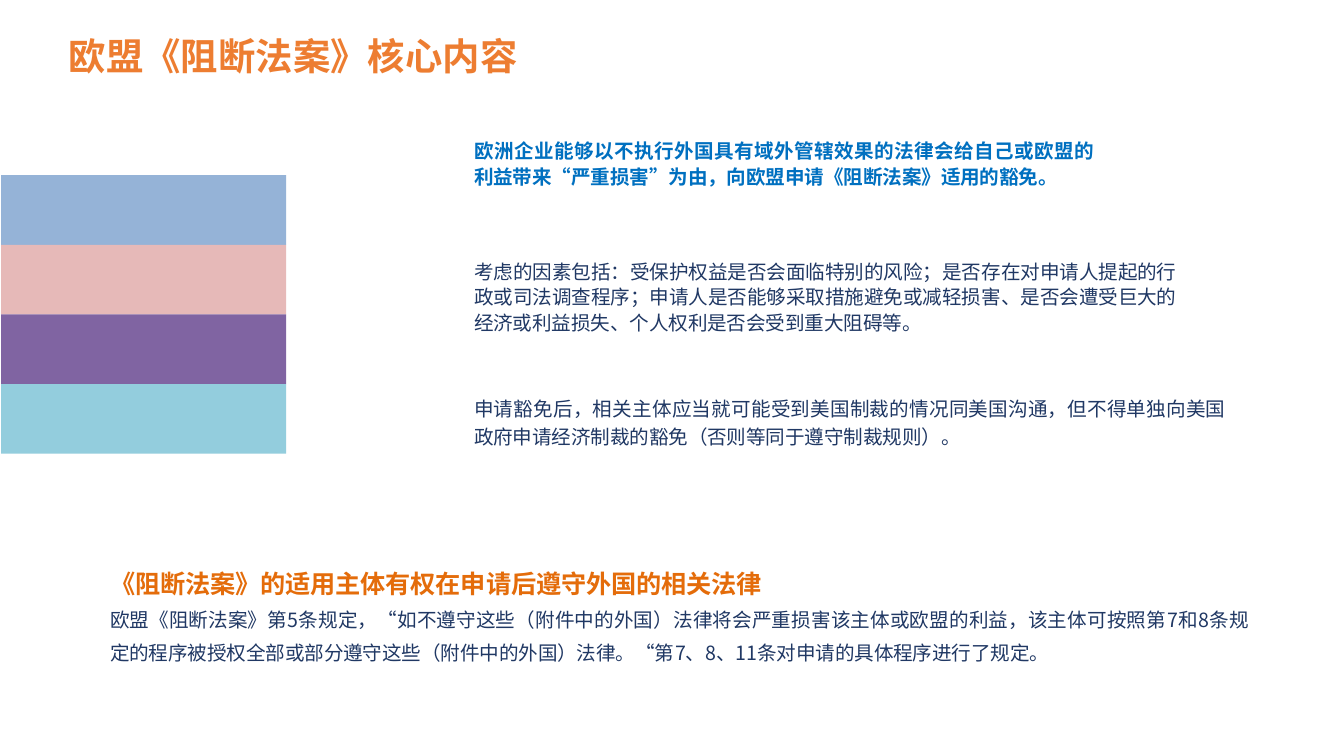
"""Build the slide on the core content of the EU blocking statute."""
import dataclasses
import typing

import lxml.etree
import pptx
import pptx.dml.color
import pptx.enum.shapes
import pptx.enum.text
import pptx.oxml.ns
import pptx.util

Cm = pptx.util.Cm
Pt = pptx.util.Pt
FONT = "Noto Sans CJK SC"
NAVY = "203864"
BAR_COLORS = ("95B3D7", "E6B9B8", "8064A2", "93CDDD")
BAR_LEFT, BAR_TOP, BAR_WIDTH, BAR_HEIGHT = 0.02, 3.31, 5.39, 1.315


@dataclasses.dataclass(frozen=True)
class Line:
    text: str
    spacing: float
    color: str = NAVY
    size: float = 10.5
    bold: bool = False


@dataclasses.dataclass(frozen=True)
class Box:
    left: float
    top: float
    width: float
    height: float
    lines: tuple[Line, ...]


TITLE = Box(1.3, 0.53, 8.56, 0.86, (
    Line("欧盟《阻断法案》核心内容", 26.7, "ED7D31", 20, True),
))
BOXES = (
    Box(8.71, 2.46, 12.24, 1.22, (
        Line("欧洲企业能够以不执行外国具有域外管辖效果的法律会给自己或欧盟的利益带来“严重损害”为由，"
             "向欧盟申请《阻断法案》适用的豁免。", 13.9, "0070C0", bold=True),
    )),
    Box(8.71, 4.73, 13.79, 1.7, (
        Line("考虑的因素包括：受保护权益是否会面临特别的风险；是否存在对申请人提起的行政或司法调查程序；"
             "申请人是否能够采取措施避免或减轻损害、是否会遭受巨大的经济或利益损失、"
             "个人权利是否会受到重大阻碍等。", 13.9),
    )),
    Box(8.71, 7.28, 14.73, 1.3, (
        Line("申请豁免后，相关主体应当就可能受到美国制裁的情况同美国沟通，但不得单独向美国政府申请经济制裁的豁免"
             "（否则等同于遵守制裁规则）。", 15),
    )),
    Box(1.83, 10.34, 22.02, 2.26, (
        Line("《阻断法案》的适用主体有权在申请后遵守外国的相关法律", 23.7, "E46C0A", 13.5, True),
        Line("欧盟《阻断法案》第5条规定，“如不遵守这些（附件中的外国）法律将会严重损害该主体或欧盟的利益，"
             "该主体可按照第7和8条规定的程序被授权全部或部分遵守这些（附件中的外国）法律。"
             "“第7、8、11条对申请的具体程序进行了规定。", 17.7),
    )),
)


def rgb(color: str) -> pptx.dml.color.RGBColor:
    return pptx.dml.color.RGBColor.from_string(color)


def set_attributes(target: typing.Any, values: dict[str, typing.Any]) -> None:
    for name, value in values.items():
        setattr(target, name, value)


def write_lines(shape: typing.Any, lines: tuple[Line, ...], alignment: typing.Any) -> None:
    frame = shape.text_frame
    for index, line in enumerate(lines):
        paragraph = frame.add_paragraph() if index else frame.paragraphs[0]
        set_attributes(paragraph, {
            "alignment": alignment,
            "line_spacing": Pt(line.spacing),
            "space_before": Pt(0),
            "space_after": Pt(0),
        })
        run = paragraph.add_run()
        run.text = line.text
        set_attributes(run.font, {"name": FONT, "size": Pt(line.size), "bold": line.bold})
        run.font.color.rgb = rgb(line.color)
        east_asian = lxml.etree.SubElement(run._r.get_or_add_rPr(), pptx.oxml.ns.qn("a:ea"))
        east_asian.set("typeface", FONT)


def format_title(shape: typing.Any, box: Box) -> None:
    set_attributes(shape, {
        "left": Cm(box.left), "top": Cm(box.top),
        "width": Cm(box.width), "height": Cm(box.height),
    })
    set_attributes(shape.text_frame, {
        "margin_left": 0, "margin_top": 0, "margin_right": 0, "margin_bottom": 0,
        "word_wrap": False,
        "vertical_anchor": pptx.enum.text.MSO_ANCHOR.TOP,
        "auto_size": pptx.enum.text.MSO_AUTO_SIZE.SHAPE_TO_FIT_TEXT,
    })
    write_lines(shape, box.lines, pptx.enum.text.PP_ALIGN.LEFT)


def add_text(slide: typing.Any, box: Box) -> None:
    shape = slide.shapes.add_textbox(Cm(box.left), Cm(box.top), Cm(box.width), Cm(box.height))
    set_attributes(shape.text_frame, {
        "word_wrap": True,
        "auto_size": pptx.enum.text.MSO_AUTO_SIZE.SHAPE_TO_FIT_TEXT,
    })
    write_lines(shape, box.lines, pptx.enum.text.PP_ALIGN.JUSTIFY)


def add_bar(slide: typing.Any, index: int, color: str) -> None:
    shape = slide.shapes.add_shape(
        pptx.enum.shapes.MSO_SHAPE.RECTANGLE,
        Cm(BAR_LEFT), Cm(BAR_TOP + index * BAR_HEIGHT), Cm(BAR_WIDTH), Cm(BAR_HEIGHT),
    )
    shape.shadow.inherit = False
    shape.fill.solid()
    shape.fill.fore_color.rgb = rgb(color)
    shape.line.fill.background()


def main() -> None:
    presentation = pptx.Presentation()
    set_attributes(presentation, {"slide_width": Cm(25.4), "slide_height": Cm(14.28)})
    slide = presentation.slides.add_slide(presentation.slide_layouts.get_by_name("Title Only"))
    format_title(slide.shapes.title, TITLE)
    for index, color in enumerate(BAR_COLORS):
        add_bar(slide, index, color)
    for box in BOXES:
        add_text(slide, box)
    presentation.save("out.pptx")


if __name__ == "__main__":
    main()
